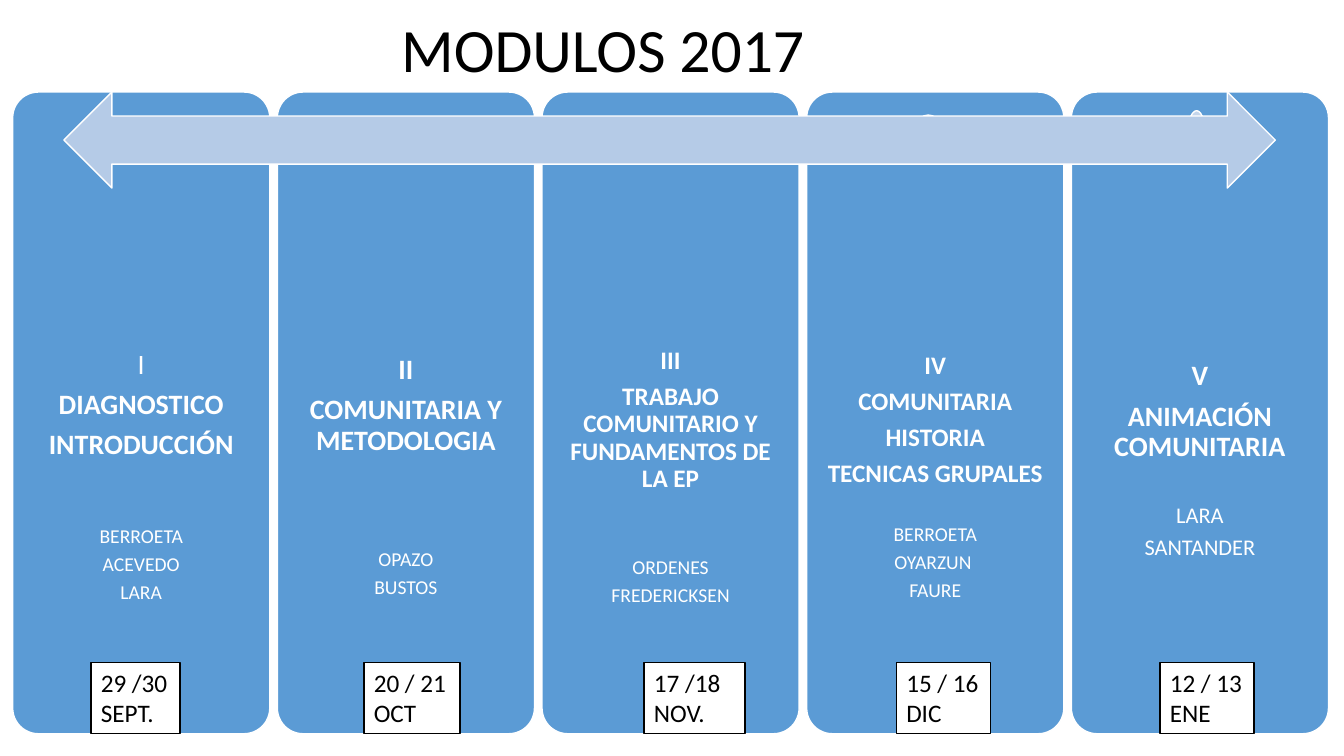
from pptx import Presentation
from pptx.dml.color import RGBColor
from pptx.enum.shapes import MSO_SHAPE as Shape
from pptx.enum.text import MSO_ANCHOR as Anchor, PP_ALIGN as Align
from pptx.util import Cm, Pt

BLUE, PALE_BLUE, ARROW_BLUE = "5B9BD5", "C4D5EB", "B5CBE7"
WHITE, BLACK = "FFFFFF", "000000"
FONT = "Calibri"

TITLE = "MODULOS 2017"

# numeral, numeral is bold, subjects, size, teachers, size,
# gap above the teachers (pt), extra space below them (cm)
MODULES = [
    ("I", False, ["DIAGNOSTICO", "INTRODUCCIÓN"], 20,
     ["BERROETA", "ACEVEDO", "LARA"], 14, 40, 0),
    ("II", True, ["COMUNITARIA Y METODOLOGIA"], 20,
     ["OPAZO", "BUSTOS"], 14, 60, 0),
    ("III", True, ["TRABAJO COMUNITARIO Y FUNDAMENTOS DE LA EP"], 18,
     ["ORDENES", "FREDERICKSEN"], 14, 40, 0),
    ("IV", True, ["COMUNITARIA", "HISTORIA", "TECNICAS GRUPALES"], 18,
     ["BERROETA", "OYARZUN ", "FAURE"], 14, 20, 0),
    ("V", True, ["ANIMACIÓN COMUNITARIA"], 20,
     ["LARA", "SANTANDER"], 16, 23, 0.82),
]

# column, left, top, width, height (cm)
ELLIPSES = [(3, 22.99, 2.9, 0.81, 1.09), (4, 29.95, 2.79, 0.41, 0.97)]

# lines, left, width (cm), wraps
DATES = [
    (["29 /30 SEPT."], 2.29, 2.25, True),
    (["20 / 21", "OCT"], 9.17, 2.42, True),
    (["17 /18", "NOV."], 16.23, 2.55, True),
    (["15 / 16", "DIC"], 22.59, 2.37, False),
    (["12 / 13", "ENE"], 29.23, 2.37, False),
]

COLUMN_LEFT, COLUMN_PITCH, COLUMN_WIDTH = 0.32, 6.67, 6.48
COLUMN_TOP, COLUMN_HEIGHT = 2.32, 16.17
TEXT_TOP, TEXT_HEIGHT = 8.79, 6.48
DATE_HEIGHT = 1.8
DATE_TOP = COLUMN_TOP + COLUMN_HEIGHT - DATE_HEIGHT


def color(hex_code):
    return RGBColor.from_string(hex_code)


def add_box(slide, kind, left, top, width, height, fill, line=WHITE):
    shape = slide.shapes.add_shape(kind, Cm(left), Cm(top), Cm(width), Cm(height))
    shape.shadow.inherit = False
    shape.fill.solid()
    shape.fill.fore_color.rgb = color(fill)
    shape.line.color.rgb = color(line)
    shape.line.width = Pt(1)
    return shape


def add_text(frame, text, size, ink=BLACK, bold=False, align=Align.LEFT,
             spacing=1.0, before=0, after=0):
    """Fill the empty first paragraph of the frame, or append a new one."""
    paragraph = frame.paragraphs[0]
    if paragraph.runs:
        paragraph = frame.add_paragraph()
    paragraph.alignment = align
    paragraph.line_spacing = spacing
    paragraph.space_before = Pt(before)
    paragraph.space_after = Pt(after)
    run = paragraph.add_run()
    run.text = text
    run.font.name = FONT
    run.font.size = Pt(size)
    run.font.bold = bold
    run.font.color.rgb = color(ink)


def add_text_box(slide, left, top, width, height):
    box = slide.shapes.add_textbox(Cm(left), Cm(top), Cm(width), Cm(height))
    frame = box.text_frame
    frame.word_wrap = True
    frame.vertical_anchor = Anchor.MIDDLE
    return frame


def add_module(slide, column, module):
    numeral, numeral_bold, subjects, size, teachers, teacher_size, gap, below = module
    left = COLUMN_LEFT + column * COLUMN_PITCH
    panel = add_box(slide, Shape.ROUNDED_RECTANGLE, left, COLUMN_TOP,
                    COLUMN_WIDTH, COLUMN_HEIGHT, BLUE)
    panel.adjustments[0] = 0.1

    frame = add_text_box(slide, left, TEXT_TOP, COLUMN_WIDTH, TEXT_HEIGHT)
    inset = size * 0.02
    frame.margin_left = frame.margin_right = frame.margin_top = Cm(inset)
    frame.margin_bottom = Cm(inset + below)

    lines = [(numeral, size, numeral_bold, 0)]
    lines += [(subject, size, True, 0) for subject in subjects]
    lines += [(teacher, teacher_size, False, 0 if index else gap)
              for index, teacher in enumerate(teachers)]
    for text, points, bold, before in lines:
        add_text(frame, text, points, ink=WHITE, bold=bold, align=Align.CENTER,
                 spacing=0.9, before=before, after=round(0.35 * points, 1))


def add_date(slide, lines, left, width, wraps):
    box = add_box(slide, Shape.RECTANGLE, left, DATE_TOP, width, DATE_HEIGHT,
                  WHITE, line=BLACK)
    frame = box.text_frame
    frame.word_wrap = wraps
    frame.vertical_anchor = Anchor.TOP
    for line in lines:
        add_text(frame, line, 18)


def main():
    presentation = Presentation()
    presentation.slide_width, presentation.slide_height = Cm(33.87), Cm(19.05)
    slide = presentation.slides.add_slide(presentation.slide_layouts[6])

    title = add_text_box(slide, 9.86, 0.3, 11.86, 2.03)
    add_text(title, TITLE, 44, spacing=0.9)

    for column, module in enumerate(MODULES):
        add_module(slide, column, module)
        for ellipse_column, *place in ELLIPSES:
            if ellipse_column == column:
                add_box(slide, Shape.OVAL, *place, PALE_BLUE)

    add_box(slide, Shape.LEFT_RIGHT_ARROW, 1.61, COLUMN_TOP, 30.53, 2.42, ARROW_BLUE)

    for date in DATES:
        add_date(slide, *date)

    presentation.save("out.pptx")


if __name__ == "__main__":
    main()
